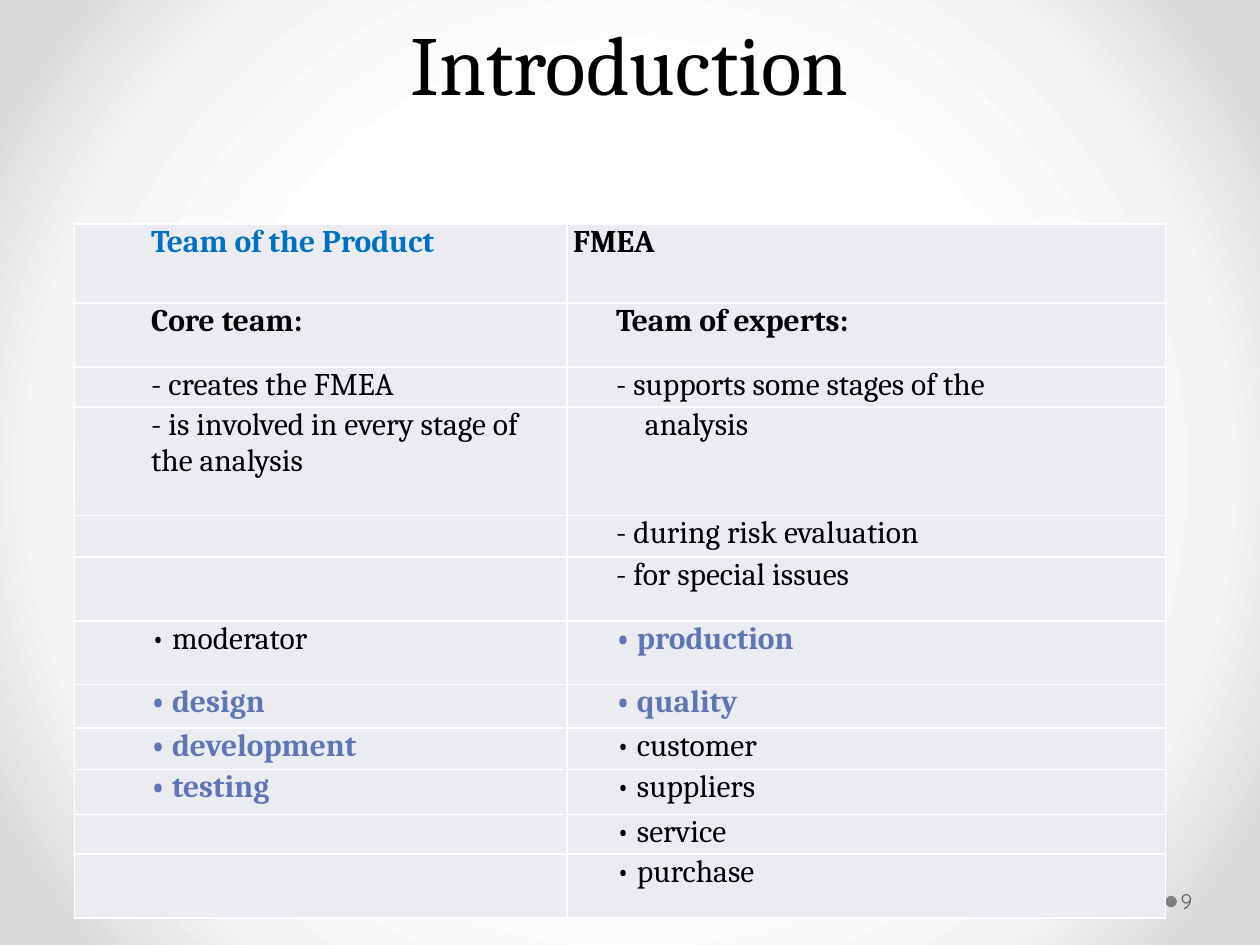
import lxml.etree
import pptx
import pptx.dml.color
import pptx.enum.shapes
import pptx.enum.text
import pptx.oxml.ns
import pptx.util

Pt = pptx.util.Pt
qn = pptx.oxml.ns.qn
ALIGN = pptx.enum.text.PP_ALIGN
ANCHOR = pptx.enum.text.MSO_ANCHOR
BLACK, BLUE, ACCENT, WHITE = "000000", "0070C0", "6076B4", "FFFFFF"


def color(value):
    return pptx.dml.color.RGBColor.from_string(value)


def write(frame, text, size=18, font="Cambria", ink=BLACK, bold=False,
          align=ALIGN.LEFT, indent=0, spacing=None):
    para = frame.paragraphs[0]
    para.alignment = align
    para.line_spacing = spacing
    para._p.get_or_add_pPr().set("marL", str(Pt(indent)))
    span = para.add_run()
    span.text = text
    span.font.size = Pt(size)
    span.font.name = font
    span.font.bold = bold
    span.font.color.rgb = color(ink)


deck = pptx.Presentation()
deck.slide_width, deck.slide_height = Pt(720), Pt(540)
page = deck.slides.add_slide(deck.slide_layouts[6])

# Radial background, white in the middle and grey in the corners
page.background.fill.gradient()
gradient = page.element.find(".//" + qn("a:gradFill"))
for child in list(gradient):
    gradient.remove(child)
stops = lxml.etree.SubElement(gradient, qn("a:gsLst"))
for position, shade in ((50, WHITE), (76, "F4F4F4"), (92, "DADADA")):
    stop = lxml.etree.SubElement(stops, qn("a:gs"), pos=str(position * 1000))
    lxml.etree.SubElement(stop, qn("a:srgbClr"), val=shade)
radial = lxml.etree.SubElement(gradient, qn("a:path"), path="circle")
lxml.etree.SubElement(radial, qn("a:fillToRect"), l="50000", t="50000", r="50000", b="50000")

# Page number with its dot
dot = page.shapes.add_shape(pptx.enum.shapes.MSO_SHAPE.OVAL,
                            Pt(666), Pt(511.9), Pt(6.5), Pt(6.5))
dot.shadow.inherit = False
dot.fill.solid()
dot.fill.fore_color.rgb = color("808080")
dot.line.fill.background()

number = page.shapes.add_textbox(Pt(672.5), Pt(500.4), Pt(44), Pt(28.8)).text_frame
number.word_wrap = True
number.margin_left = Pt(2.2)
number.vertical_anchor = ANCHOR.MIDDLE
write(number, "9", size=12, font="Quicksand", ink="595959")

title = page.shapes.add_textbox(Pt(36), Pt(0), Pt(648), Pt(126)).text_frame
title.word_wrap = True
title.margin_top = Pt(6.4)
title.vertical_anchor = ANCHOR.TOP
write(title, "Introduction", size=48, align=ALIGN.CENTER, spacing=Pt(58))

# Team table: row height, then text and format of the left and right cells
heading = {"bold": True}
key = {"bold": True, "ink": ACCENT}
plain = {}
rows = [
    (45.2, ("Team of the Product", {"bold": True, "ink": BLUE}),
     ("FMEA", {"bold": True, "indent": 2.9})),
    (36.5, ("Core team:", heading), ("Team of experts:", heading)),
    (22.8, ("- creates the FMEA", plain), ("- supports some stages of the", plain)),
    (61.9, ("- is involved in every stage of the analysis", plain),
     ("analysis", {"indent": 43.9})),
    (23.9, None, ("- during risk evaluation", plain)),
    (36.5, None, ("- for special issues", plain)),
    (36.2, ("• moderator", plain), ("• production", key)),
    (25, ("• design", key), ("• quality", key)),
    (23.6, ("• development", key), ("• customer", plain)),
    (25.8, ("• testing", key), ("• suppliers", plain)),
    (22.6, None, ("• service", plain)),
    (36.6, None, ("• purchase", plain)),
]
column_widths = (281.5, 342)
column_indents = (43.2, 27.4)

table = page.shapes.add_table(len(rows), 2, Pt(42.5), Pt(128.1), Pt(sum(column_widths)),
                              Pt(sum(row[0] for row in rows))).table
for column, width in zip(table.columns, column_widths):
    column.width = Pt(width)
for row, (height, *entries) in zip(table.rows, rows):
    row.height = Pt(height)
    for cell, entry, indent in zip(row.cells, entries, column_indents):
        cell.margin_left = cell.margin_right = Pt(0.7)
        cell.margin_top = cell.margin_bottom = 0
        properties = cell._tc.get_or_add_tcPr()
        for side in ("a:lnL", "a:lnR", "a:lnT", "a:lnB"):
            border = lxml.etree.SubElement(properties, qn(side), w=str(Pt(1)))
            paint = lxml.etree.SubElement(border, qn("a:solidFill"))
            lxml.etree.SubElement(paint, qn("a:srgbClr"), val=WHITE)
        cell.fill.solid()
        cell.fill.fore_color.rgb = color("EAECF2")
        if entry:
            text, style = entry
            write(cell.text_frame, text, **{"indent": indent, **style})
        else:
            cell.text_frame.paragraphs[0].font.size = Pt(18)

deck.save("out.pptx")
